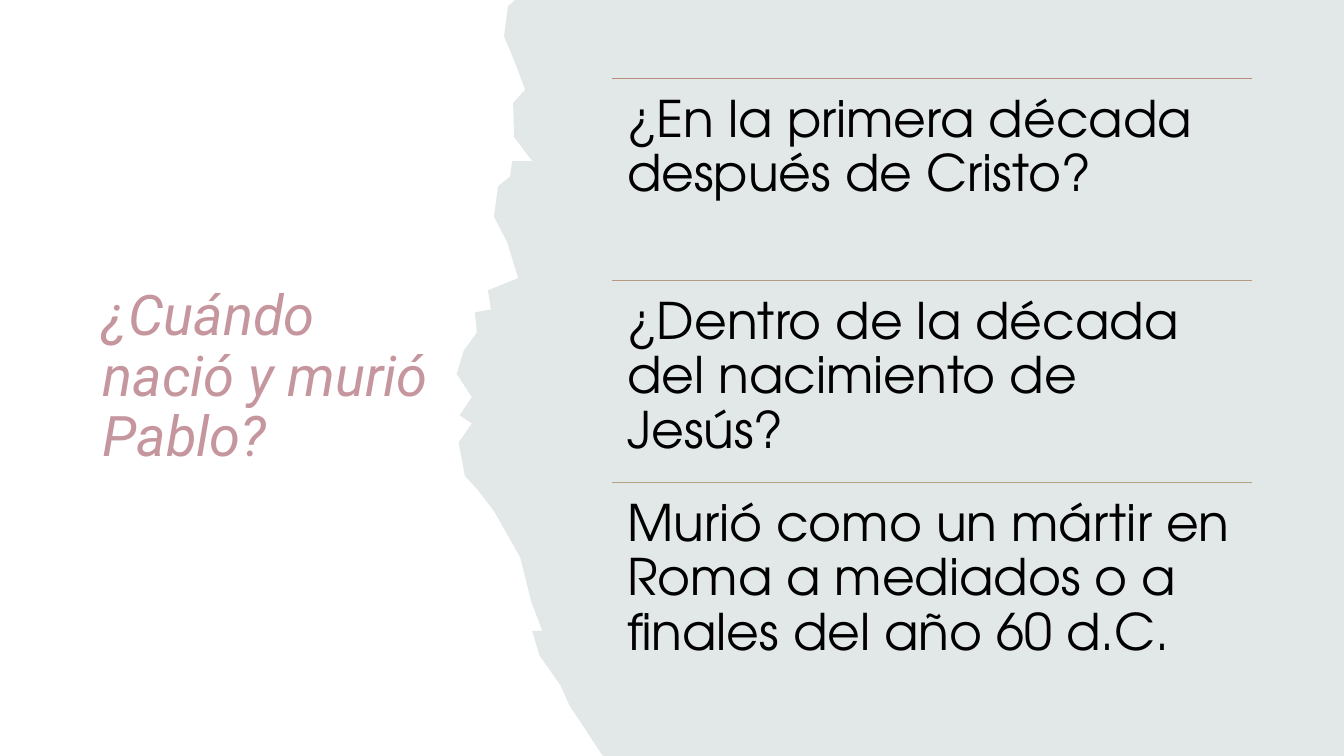
import dataclasses

import lxml.etree
import pptx
import pptx.dml.color
import pptx.enum.shapes
import pptx.enum.text
import pptx.oxml.ns
import pptx.shapes.base
import pptx.slide
import pptx.util

Inches = pptx.util.Inches
Point = tuple[float, float]


@dataclasses.dataclass(frozen=True)
class Theme:
    white: str = "FFFFFF"
    mist: str = "E2E8E7"
    rose: str = "C6969E"
    ink: str = "000000"
    head_font: str = "Roboto"
    text_font: str = "TeX Gyre Adventor"
    head_size: float = 40
    text_size: float = 36
    rule: float = 1


@dataclasses.dataclass(frozen=True)
class Box:
    left: float
    top: float
    width: float
    height: float

    def lengths(self) -> list[int]:
        return [Inches(side) for side in dataclasses.astuple(self)]


@dataclasses.dataclass(frozen=True)
class Row:
    text: str
    tint: str


THEME = Theme()
PAGE = Box(0, 0, 13.33, 7.5)
TITLE = Box(0.92, 0.78, 3.5, 5.94)
LIST = Box(6.07, 0.78, 6.35, 6.01)
ROWS = [
    Row("¿En la primera década después de Cristo?", "BA8E7F"),
    Row("¿Dentro de la década del nacimiento de Jesús?", "B69980"),
    Row("Murió como un mártir en Roma a mediados o a finales del año 60 d.C.", "B2A281"),
]
EDGE = [
    (5.11, 0), (5.04, 0.06), (5, 0.36), (5.1, 0.6), (5.21, 0.89), (5.09, 1.02),
    (5.1, 1.36), (5.28, 1.6), (5.08, 1.6), (5.06, 1.75), (4.94, 1.85), (4.9, 2.15),
    (5.03, 2.4), (5.14, 2.76), (4.84, 2.88), (4.87, 3.07), (4.71, 3.1), (4.73, 3.3),
    (4.6, 3.48), (4.53, 3.71), (4.68, 3.94), (4.56, 4.12), (4.68, 4.2), (4.55, 4.39),
    (4.61, 4.72), (4.73, 4.85), (4.9, 5.07), (5.16, 5.53), (5.27, 5.97), (5.38, 6.26),
    (5.28, 6.26), (5.35, 6.5), (5.56, 6.8), (5.65, 7), (5.98, 7.5),
]


def shade(code: str) -> pptx.dml.color.RGBColor:
    return pptx.dml.color.RGBColor.from_string(code)


def paint(shape: pptx.shapes.base.BaseShape, code: str) -> None:
    shape.shadow.inherit = False
    shape.fill.solid()
    shape.fill.fore_color.rgb = shade(code)
    shape.line.fill.background()


def write(slide: pptx.slide.Slide, text: str, *, box: Box, font: str, size: float,
          color: str, italic: bool = False, middle: bool = False,
          inset: Point = (0.1, 0.05)) -> None:
    frame = slide.shapes.add_textbox(*box.lengths()).text_frame
    frame.word_wrap = True
    anchor = pptx.enum.text.MSO_ANCHOR
    frame.vertical_anchor = anchor.MIDDLE if middle else anchor.TOP
    frame.margin_left = frame.margin_right = Inches(inset[0])
    frame.margin_top = frame.margin_bottom = Inches(inset[1])
    line = frame.paragraphs[0]
    line.line_spacing = 0.9
    run = line.add_run()
    run.text = text
    run.font.name = font
    run.font.size = pptx.util.Pt(size)
    run.font.italic = italic
    run.font.color.rgb = shade(color)


def draw_rule(slide: pptx.slide.Slide, box: Box, color: str) -> None:
    left, top, width, _ = box.lengths()
    kind = pptx.enum.shapes.MSO_CONNECTOR.STRAIGHT
    rule = slide.shapes.add_connector(kind, left, top, left + width, top)
    rule.line.color.rgb = shade(color)
    rule.line.width = pptx.util.Pt(THEME.rule)
    lxml.etree.SubElement(rule.element.spPr, pptx.oxml.ns.qn("a:effectLst"))


def draw_row(slide: pptx.slide.Slide, row: Row, box: Box) -> None:
    draw_rule(slide, box, row.tint)
    write(slide, row.text, box=box, font=THEME.text_font, size=THEME.text_size,
          color=THEME.ink, inset=(0.15, 0.15))


def draw_back(slide: pptx.slide.Slide) -> None:
    fill = slide.background.fill
    fill.solid()
    fill.fore_color.rgb = shade(THEME.mist)
    sheet = slide.shapes.add_shape(pptx.enum.shapes.MSO_SHAPE.RECTANGLE, *PAGE.lengths())
    paint(sheet, THEME.white)


def draw_torn(slide: pptx.slide.Slide) -> None:
    ends = [(PAGE.width, PAGE.height), (PAGE.width, 0)]
    first, *rest = [(Inches(x), Inches(y)) for x, y in EDGE + ends]
    pen = slide.shapes.build_freeform(*first)
    pen.add_line_segments(rest, close=True)
    paint(pen.convert_to_shape(), THEME.mist)


def main() -> None:
    deck = pptx.Presentation()
    deck.slide_width, deck.slide_height = Inches(PAGE.width), Inches(PAGE.height)
    slide = deck.slides.add_slide(deck.slide_layouts[6])
    draw_back(slide)
    write(slide, "¿Cuándo nació y murió Pablo?", box=TITLE, font=THEME.head_font,
          size=THEME.head_size, color=THEME.rose, italic=True, middle=True)
    draw_torn(slide)
    pitch = LIST.height / len(ROWS)
    for place, row in enumerate(ROWS):
        draw_row(slide, row, Box(LIST.left, LIST.top + place * pitch, LIST.width, pitch))
    deck.save("out.pptx")


if __name__ == "__main__":
    main()
